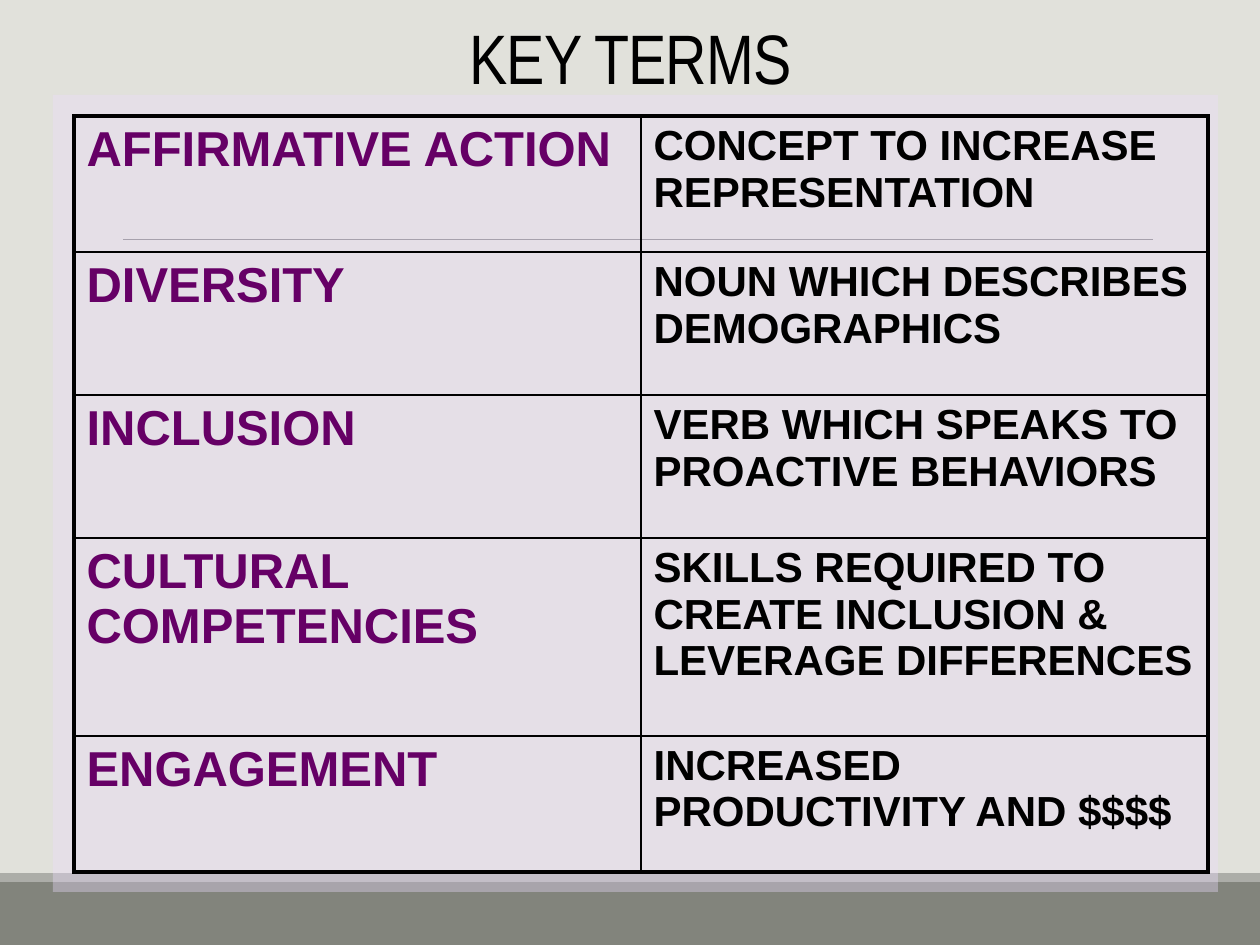
import pptx
import pptx.util
import pptx.dml.color
import pptx.enum.shapes
import pptx.enum.text
import pptx.oxml
import pptx.oxml.ns
from lxml import etree

# Content
TITLE = "KEY TERMS"
# term, definition, row height in px
TERMS = [
    ("AFFIRMATIVE ACTION", "CONCEPT TO INCREASE REPRESENTATION", 136),
    ("DIVERSITY", "NOUN WHICH DESCRIBES DEMOGRAPHICS", 143),
    ("INCLUSION", "VERB WHICH SPEAKS TO PROACTIVE BEHAVIORS", 143),
    ("CULTURAL COMPETENCIES",
     "SKILLS REQUIRED TO CREATE INCLUSION & LEVERAGE DIFFERENCES", 198),
    ("ENGAGEMENT", "INCREASED PRODUCTIVITY AND $$$$", 136),
]
COLUMN_STYLES = [(28, "660066"), (24, "000000")]  # text size, colour

# Geometry in px, 126 to the inch
SLIDE_W, SLIDE_H = 1260, 945
FOOTER_TOP, STRIP_H = 882, 9
TABLE_LEFT, TABLE_TOP, COLUMN_W = 74, 116, 567
OUTER_PT, INNER_PT = 2.25, 1


def px(length):
    return pptx.util.Emu(round(length * 914400 / 126))


def color(value):
    return pptx.dml.color.RGBColor.from_string(value)


def add_block(slide, left, top, width, height, fill, alpha=None):
    block = slide.shapes.add_shape(
        pptx.enum.shapes.MSO_SHAPE.RECTANGLE,
        px(left), px(top), px(width), px(height))
    block.shadow.inherit = False
    block.line.fill.background()
    block.fill.solid()
    block.fill.fore_color.rgb = color(fill)
    if alpha is not None:
        tint = block.fill._xPr.find(".//" + pptx.oxml.ns.qn("a:srgbClr"))
        etree.SubElement(tint, pptx.oxml.ns.qn("a:alpha"), val=str(alpha * 1000))


def style_font(para, size, name, value, bold=False):
    font = para.font
    font.size, font.name, font.bold = pptx.util.Pt(size), name, bold
    font.color.rgb = color(value)


def set_borders(cell, widths):
    """Put left, right, top and bottom lines before the cell's fill."""
    properties = cell._tc.get_or_add_tcPr()
    for index, (side, width) in enumerate(zip("LRTB", widths)):
        properties.insert(index, pptx.oxml.parse_xml(
            f'<a:ln{side} {pptx.oxml.ns.nsdecls("a")} w="{int(width * 12700)}">'
            '<a:solidFill><a:srgbClr val="000000"/></a:solidFill>'
            f'</a:ln{side}>'))


def add_terms_table(slide):
    row_count, column_count = len(TERMS), len(COLUMN_STYLES)
    table = slide.shapes.add_table(
        row_count, column_count, px(TABLE_LEFT), px(TABLE_TOP),
        px(COLUMN_W * column_count), px(sum(term[2] for term in TERMS))).table
    table.first_row = table.horz_banding = False
    for column in table.columns:
        column.width = px(COLUMN_W)
    for r, (*texts, height) in enumerate(TERMS):
        table.rows[r].height = px(height)
        for c, (text, (size, value)) in enumerate(zip(texts, COLUMN_STYLES)):
            cell = table.cell(r, c)
            cell.text = text
            style_font(cell.text_frame.paragraphs[0], size, "Arial", value, bold=True)
            cell.fill.background()
            on_edge = (c == 0, c == column_count - 1, r == 0, r == row_count - 1)
            set_borders(cell, [OUTER_PT if edge else INNER_PT for edge in on_edge])


def main():
    deck = pptx.Presentation()
    deck.slide_width, deck.slide_height = px(SLIDE_W), px(SLIDE_H)
    slide = deck.slides.add_slide(deck.slide_layouts[6])
    slide.background.fill.solid()
    slide.background.fill.fore_color.rgb = color("E1E1DB")

    # Footer bands
    add_block(slide, 0, FOOTER_TOP, SLIDE_W, SLIDE_H - FOOTER_TOP, "82847C")
    add_block(slide, 0, FOOTER_TOP - STRIP_H, SLIDE_W, STRIP_H, "ACADA8")

    # Thin rule under the panel
    rule = slide.shapes.add_connector(
        pptx.enum.shapes.MSO_CONNECTOR.STRAIGHT, px(123), px(239), px(1153), px(239))
    rule.line.color.rgb = color("808080")
    rule.line.width = pptx.util.Pt(0.5)
    etree.SubElement(rule._element.spPr, pptx.oxml.ns.qn("a:effectLst"))

    # Translucent panel
    add_block(slide, 53, 95, 1165, 797, "EEDDFF", alpha=36)

    # Title
    box = slide.shapes.add_textbox(px(95), px(21), px(1071), px(84))
    frame = box.text_frame
    frame.word_wrap = True
    frame.vertical_anchor = pptx.enum.text.MSO_ANCHOR.MIDDLE
    para = frame.paragraphs[0]
    para.alignment = pptx.enum.text.PP_ALIGN.CENTER
    para.line_spacing = 0.85
    span = para.add_run()
    span.text = TITLE
    style_font(para, 40, "Arial Narrow", "000000")
    span.font._element.set("spc", "-50")

    add_terms_table(slide)
    deck.save("out.pptx")


if __name__ == "__main__":
    main()
